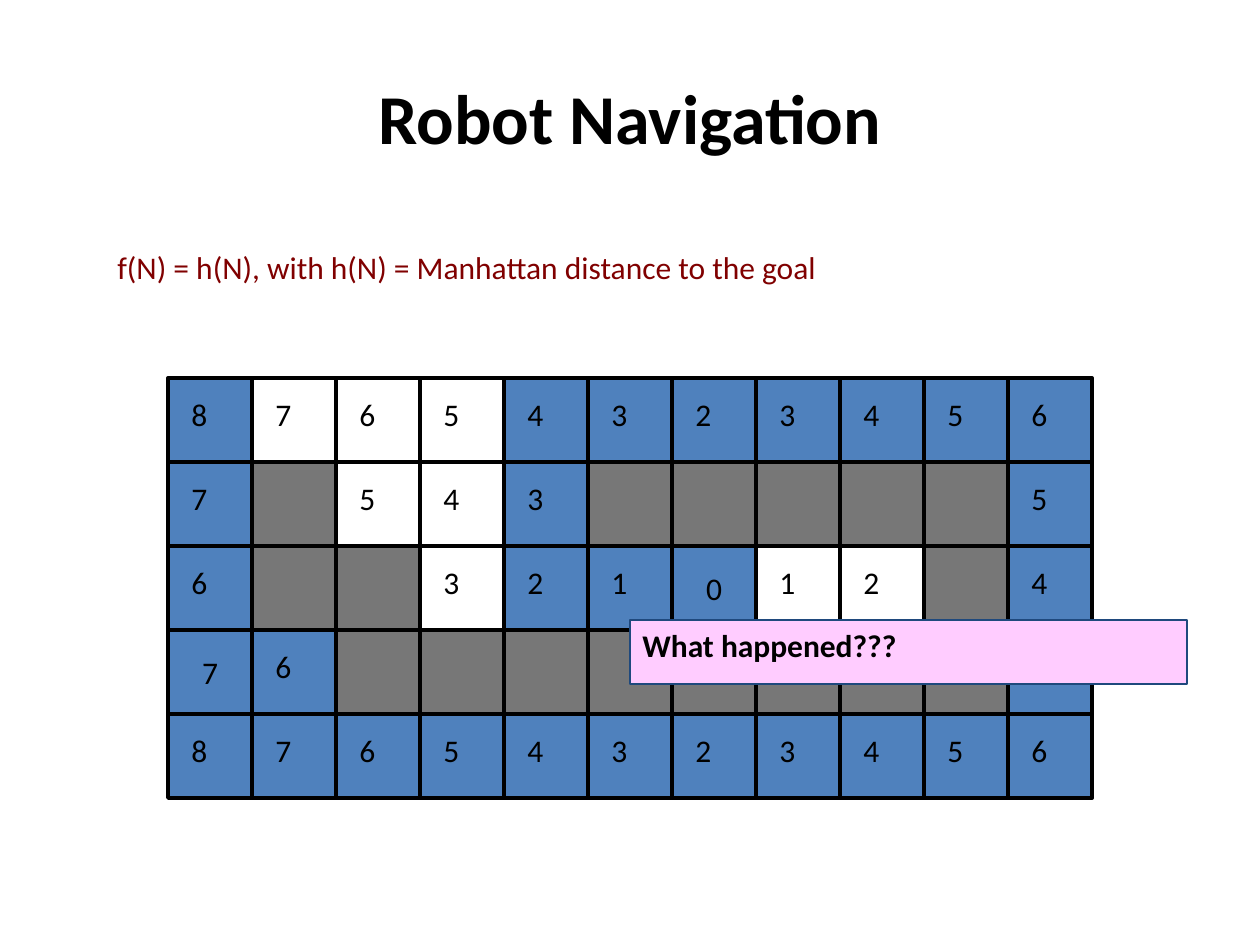
from pptx import Presentation
from pptx.util import Pt
from pptx.dml.color import RGBColor
from pptx.enum.shapes import MSO_SHAPE, MSO_CONNECTOR
from pptx.enum.text import MSO_ANCHOR, PP_ALIGN
from pptx.oxml.ns import qn
from lxml.etree import SubElement

SCALE = 914400 / 126  # EMU in one px
CELL = 84
FONT = "Calibri"
COLORS = {"visited": "4F81BD", "wall": "777777", "ink": "000000",
          "formula": "800000", "callout": "FFCCFF", "callout_line": "1F497D"}

# One token per cell: # is a wall, a trailing o an open cell, a trailing * a marked cell
MAZE = [row.split() for row in (
    "8 7o 6o 5o 4 3 2 3 4 5 6",
    "7 # 5o 4o 3 # # # # # 5",
    "6 # # 3o 2 1 0* 1o 2o # 4",
    "7* 6 # # # # # # # # 5",
    "8 7 6 5 4 3 2 3 4 5 6",
)]


def emu(*lengths):
    return [round(n * SCALE) for n in lengths]


def rgb(name):
    return RGBColor.from_string(COLORS[name])


def write(shape, text, size=18, color="ink", bold=False, align=PP_ALIGN.LEFT,
          anchor=MSO_ANCHOR.TOP):
    tf = shape.text_frame
    tf.word_wrap = True
    tf.vertical_anchor = anchor
    p = tf.paragraphs[0]
    p.text = text
    p.alignment = align
    p.font.name, p.font.size, p.font.bold = FONT, Pt(size), bold
    p.font.color.rgb = rgb(color)


def add_text(s, box, text, **style):
    write(s.shapes.add_textbox(*emu(*box)), text, **style)


def add_rect(s, box, fill=None, line="ink", width=2.25):
    sp = s.shapes.add_shape(MSO_SHAPE.RECTANGLE, *emu(*box))
    sp.shadow.inherit = False
    if fill:
        sp.fill.solid()
        sp.fill.fore_color.rgb = rgb(fill)
    else:
        sp.fill.background()
    sp.line.color.rgb = rgb(line)
    sp.line.width = Pt(width)
    return sp


def add_line(s, x1, y1, x2, y2):
    line = s.shapes.add_connector(MSO_CONNECTOR.STRAIGHT, *emu(x1, y1, x2, y2))
    line.line.color.rgb = rgb("ink")
    line.line.width = Pt(2.25)
    SubElement(line._element.spPr, qn("a:effectLst"))


def add_title(s, box, text):
    title = s.shapes.title
    title.left, title.top, title.width, title.height = emu(*box)
    write(title, text, size=40, bold=True, align=PP_ALIGN.CENTER,
          anchor=MSO_ANCHOR.MIDDLE)


def add_maze(s, left, top):
    rows, cols = len(MAZE), len(MAZE[0])
    right, bottom = left + cols * CELL, top + rows * CELL
    cells = [(token, (left + c * CELL, top + r * CELL, CELL, CELL))
             for r, row in enumerate(MAZE) for c, token in enumerate(row)]

    # Visited cells
    for token, box in cells:
        if token.isdigit():
            add_rect(s, box, "visited", width=0.75)

    # Frame and grid lines
    add_rect(s, (left, top, right - left, bottom - top))
    for x in range(left + CELL, right, CELL):
        add_line(s, x, top, x, bottom)
    for y in range(top + CELL, bottom, CELL):
        add_line(s, left, y, right, y)

    # Walls, marked cells and distances
    for token, box in cells:
        if token == "#":
            add_rect(s, box, "wall")
        elif token.endswith("*"):
            write(add_rect(s, box, "visited"), token[0],
                  align=PP_ALIGN.CENTER, anchor=MSO_ANCHOR.MIDDLE)
        else:
            add_text(s, (box[0] + 11, box[1] + 11, 48, 63), token[0])


def add_callout(s, box, text):
    sp = add_rect(s, box, "callout", "callout_line", 0.75)
    write(sp, text, bold=True)


def main():
    prs = Presentation()
    prs.slide_width, prs.slide_height = emu(1260, 945)
    s = prs.slides.add_slide(prs.slide_layouts[5])
    add_title(s, (63, 38, 1134, 157), "Robot Navigation")
    add_text(s, (105, 242, 1074, 63),
             "f(N) = h(N), with h(N) = Manhattan distance to the goal",
             color="formula")
    add_maze(s, 168, 378)
    add_callout(s, (630, 620, 557, 64), "What happened???")
    prs.save("out.pptx")


if __name__ == "__main__":
    main()
